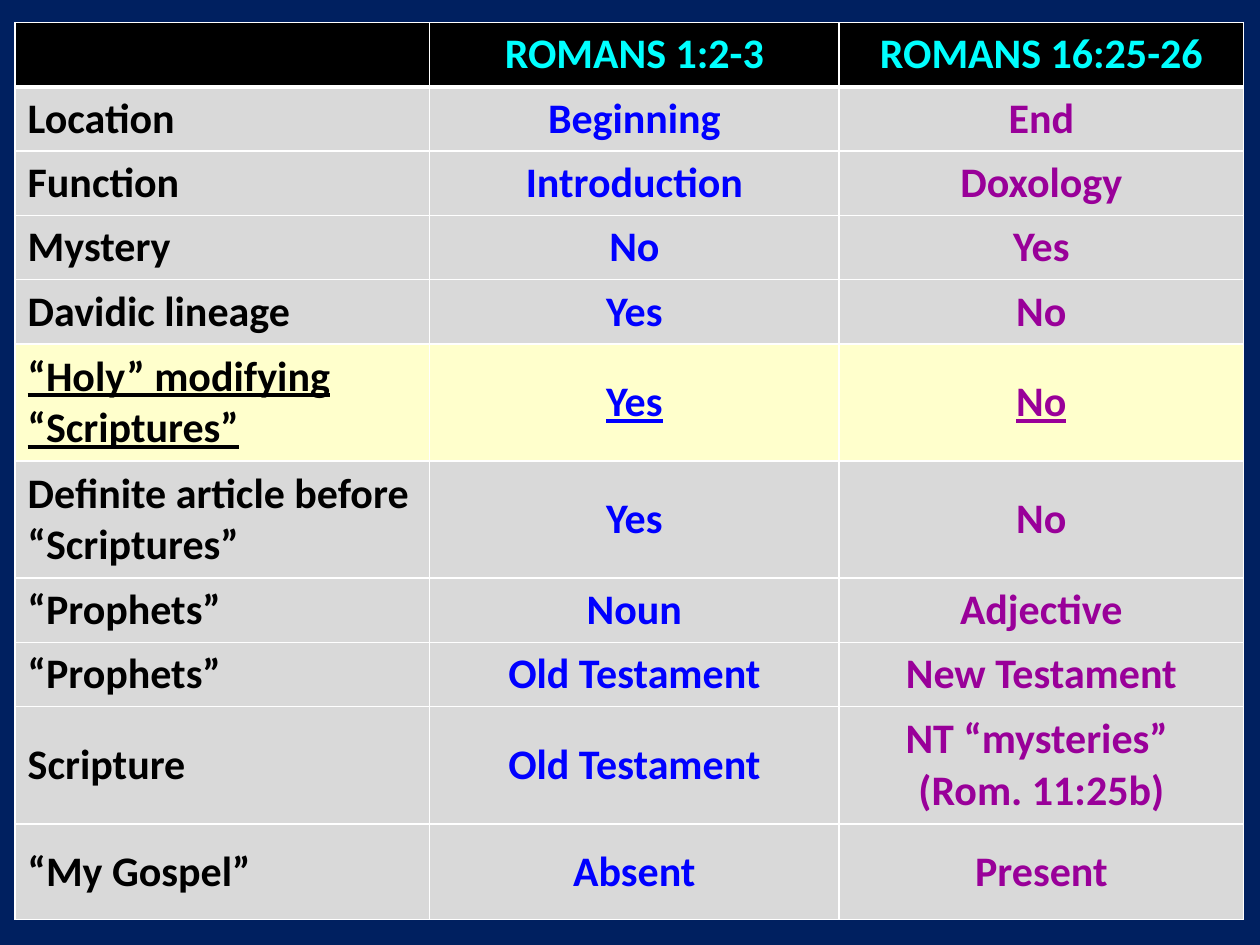
from dataclasses import dataclass

from lxml import etree
from pptx import Presentation
from pptx import util as u
from pptx.dml.color import RGBColor
from pptx.enum import text
from pptx.oxml.ns import qn


@dataclass(frozen=True)
class Theme:
    font: str = "Calibri"
    size: int = 24
    background: str = "002060"
    header_fill: str = "000000"
    header_text: str = "00FFFF"
    body_fill: str = "D9D9D9"
    highlight_fill: str = "FFFFCC"
    border: str = "FFFFFF"
    column_text: tuple[str, ...] = ("000000", "0000FF", "990099")


@dataclass(frozen=True)
class Comparison:
    aspect: str
    opening: str
    closing: str
    height: float = 0.51
    highlighted: bool = False


THEME = Theme()
SLIDE_WIDTH, SLIDE_HEIGHT = 10, 7.5
TABLE_LEFT, TABLE_TOP = 0.12, 0.18
COLUMN_WIDTHS = (3.29, 3.25, 3.21)
TWO_LINES = 0.93

HEADER = Comparison("", "ROMANS 1:2-3", "ROMANS 16:25-26")
COMPARISONS = (
    Comparison("Location", "Beginning", "End"),
    Comparison("Function", "Introduction", "Doxology"),
    Comparison("Mystery", "No", "Yes"),
    Comparison("Davidic lineage", "Yes", "No"),
    Comparison("“Holy” modifying “Scriptures”", "Yes", "No", TWO_LINES, highlighted=True),
    Comparison("Definite article before “Scriptures”", "Yes", "No", TWO_LINES),
    Comparison("“Prophets”", "Noun", "Adjective"),
    Comparison("“Prophets”", "Old Testament", "New Testament"),
    Comparison("Scripture", "Old Testament", "NT “mysteries” \n(Rom. 11:25b)", TWO_LINES),
    Comparison("“My Gospel”", "Absent", "Present", 0.76),
)


def set_borders(cell, top: float = 1, bottom: float = 1) -> None:
    """Outline a cell; widths are in points and the sides are always 1."""
    properties = cell._tc.get_or_add_tcPr()
    widths = {"a:lnL": 1, "a:lnR": 1, "a:lnT": top, "a:lnB": bottom}
    for index, (side, width) in enumerate(widths.items()):
        line = etree.Element(qn(side), w=str(u.Pt(width)))
        fill = etree.SubElement(line, qn("a:solidFill"))
        etree.SubElement(fill, qn("a:srgbClr"), val=THEME.border)
        properties.insert(index, line)


def fill_cell(cell, wording: str, fill: str, color: str, centered: bool, underlined: bool) -> None:
    cell.fill.solid()
    cell.fill.fore_color.rgb = RGBColor.from_string(fill)
    cell.text_frame.text = wording
    for paragraph in cell.text_frame.paragraphs:
        if centered:
            paragraph.alignment = text.PP_ALIGN.CENTER
        for run in paragraph.runs:
            run.font.name = THEME.font
            run.font.size = u.Pt(THEME.size)
            run.font.bold = True
            run.font.underline = underlined
            run.font.color.rgb = RGBColor.from_string(color)


def draw_row(table, index: int, row: Comparison) -> None:
    is_header = index == 0
    if is_header:
        fill = THEME.header_fill
    else:
        fill = THEME.highlight_fill if row.highlighted else THEME.body_fill
    table.rows[index].height = u.Inches(row.height)
    for column, wording in enumerate((row.aspect, row.opening, row.closing)):
        cell = table.cell(index, column)
        color = THEME.header_text if is_header else THEME.column_text[column]
        fill_cell(cell, wording, fill, color, column > 0, row.highlighted)
        if not is_header:
            cell.vertical_anchor = text.MSO_ANCHOR.MIDDLE
        set_borders(cell, top=3 if index == 1 else 1, bottom=3 if is_header else 1)


def main() -> None:
    deck = Presentation()
    deck.slide_width, deck.slide_height = u.Inches(SLIDE_WIDTH), u.Inches(SLIDE_HEIGHT)
    slide = deck.slides.add_slide(deck.slide_layouts[6])
    slide.background.fill.solid()
    slide.background.fill.fore_color.rgb = RGBColor.from_string(THEME.background)

    rows = (HEADER, *COMPARISONS)
    table = slide.shapes.add_table(
        len(rows), len(COLUMN_WIDTHS),
        u.Inches(TABLE_LEFT), u.Inches(TABLE_TOP),
        u.Inches(sum(COLUMN_WIDTHS)), u.Inches(sum(row.height for row in rows)),
    ).table
    for column, width in zip(table.columns, COLUMN_WIDTHS):
        column.width = u.Inches(width)
    for index, row in enumerate(rows):
        draw_row(table, index, row)
    deck.save("out.pptx")


if __name__ == "__main__":
    main()
